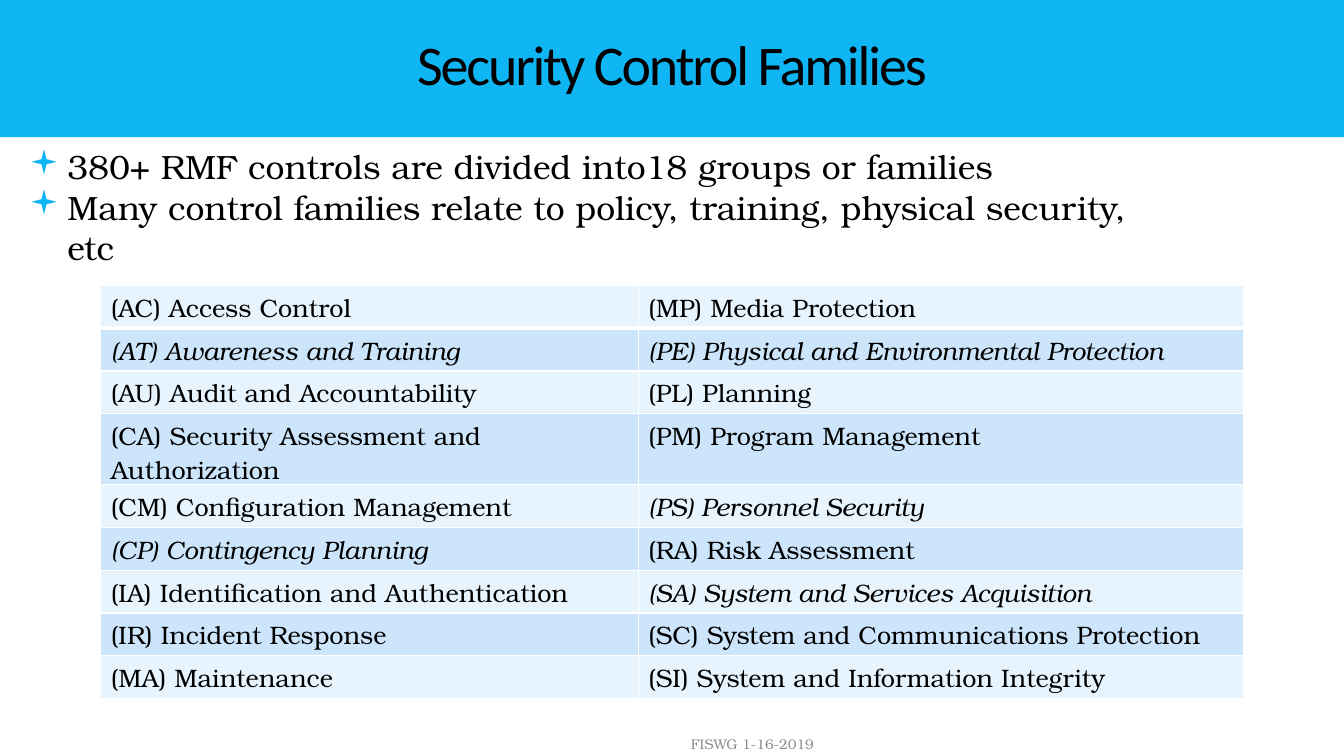
from lxml import etree
from pptx import Presentation
from pptx.dml.color import RGBColor
from pptx.enum.text import MSO_ANCHOR, MSO_AUTO_SIZE, PP_ALIGN
from pptx.oxml.ns import qn
from pptx.util import Inches, Pt

CENTER, RIGHT = PP_ALIGN.CENTER, PP_ALIGN.RIGHT
MIDDLE, BOTTOM = MSO_ANCHOR.MIDDLE, MSO_ANCHOR.BOTTOM
FIXED, GROW = MSO_AUTO_SIZE.NONE, MSO_AUTO_SIZE.SHAPE_TO_FIT_TEXT

SERIF = "TeX Gyre Bonum"
BLUE, BLACK, GRAY, WHITE = "10B6F4", "000000", "8C8C8C", "FFFFFF"
BANDS = ["E7F3FD", "CCE5FB"]
WIDTH, HEIGHT = 13.33, 7.5
INDENT = 0.38
COLUMNS, TABLE_HEIGHT = [5.33, 6], 3.83

BULLETS = [
    "380+ RMF controls are divided into18 groups or families",
    "Many control families relate to policy, training, physical security, etc",
]
FAMILIES = [
    ("(AC) Access Control", "(MP) Media Protection"),
    ("(AT) Awareness and Training", "(PE) Physical and Environmental Protection"),
    ("(AU) Audit and Accountability", "(PL) Planning"),
    ("(CA) Security Assessment and Authorization", "(PM) Program Management"),
    ("(CM) Configuration Management", "(PS) Personnel Security"),
    ("(CP) Contingency Planning", "(RA) Risk Assessment"),
    ("(IA) Identification and Authentication", "(SA) System and Services Acquisition"),
    ("(IR) Incident Response", "(SC) System and Communications Protection"),
    ("(MA) Maintenance", "(SI) System and Information Integrity"),
]
ITALIC_CODES = {"AT", "PE", "PS", "CP", "SA"}


def color(value):
    return RGBColor.from_string(value)


def write(paragraph, text, size, font=SERIF, fill=BLACK, italic=False):
    run = paragraph.add_run()
    run.text = text
    formats = {"size": Pt(size), "name": font, "bold": False, "italic": italic}
    for name, value in formats.items():
        setattr(run.font, name, value)
    run.font.color.rgb = color(fill)
    return run


presentation = Presentation()
presentation.slide_width, presentation.slide_height = Inches(WIDTH), Inches(HEIGHT)
slide = presentation.slides.add_slide(presentation.slide_layouts[5])

# Title banner
title = slide.shapes.title
title.left, title.top, title.width, title.height = 0, 0, Inches(WIDTH), Inches(1.36)
title.fill.solid()
title.fill.fore_color.rgb = color(BLUE)
frame = title.text_frame
formats = {"vertical_anchor": MIDDLE, "auto_size": FIXED, "word_wrap": True}
for side in ("left", "top", "right", "bottom"):
    formats["margin_" + side] = Inches(0.25)
for name, value in formats.items():
    setattr(frame, name, value)
paragraph = frame.paragraphs[0]
paragraph.alignment, paragraph.line_spacing = CENTER, 0.85
run = write(paragraph, "Security Control Families", 40, "Calibri")
run.font._element.set("spc", "-150")

# Bulleted introduction
frame = slide.shapes.add_textbox(
    Inches(0.19), Inches(1.4), Inches(11.24), Inches(0.91)).text_frame
frame.word_wrap, frame.auto_size = True, GROW
for index, text in enumerate(BULLETS):
    paragraph = frame.add_paragraph() if index else frame.paragraphs[0]
    write(paragraph, text, 24)
    properties = paragraph._p.get_or_add_pPr()
    properties.set("marL", str(Inches(INDENT)))
    properties.set("indent", str(Inches(-INDENT)))
    bullet_color = etree.SubElement(properties, qn("a:buClr"))
    etree.SubElement(bullet_color, qn("a:srgbClr"), val=BLUE)
    etree.SubElement(properties, qn("a:buFont"), typeface="Wingdings")
    etree.SubElement(properties, qn("a:buChar"), char="▪")

# Footer
frame = slide.shapes.add_textbox(
    Inches(6.57), Inches(7.15), Inches(1.6), Inches(0.35)).text_frame
formats = {"word_wrap": True, "auto_size": FIXED, "vertical_anchor": BOTTOM,
           "margin_bottom": Inches(0.04)}
for name, value in formats.items():
    setattr(frame, name, value)
frame.paragraphs[0].alignment = RIGHT
write(frame.paragraphs[0], "FISWG 1-16-2019", 10, fill=GRAY)

# Table of control families
table = slide.shapes.add_table(
    len(FAMILIES), len(COLUMNS), Inches(1), Inches(2.83),
    Inches(sum(COLUMNS)), Inches(TABLE_HEIGHT)).table
table.first_row = table.horz_banding = False
for column, width in zip(table.columns, COLUMNS):
    column.width = Inches(width)
for row_index, families in enumerate(FAMILIES):
    table.rows[row_index].height = Inches(TABLE_HEIGHT / len(FAMILIES))
    for column_index, family in enumerate(families):
        cell = table.cell(row_index, column_index)
        write(cell.text_frame.paragraphs[0], family, 18,
              italic=family[1:3] in ITALIC_CODES)

        # White rules, thicker under the first row
        for side in "LRTB":
            thick = (row_index, side) in [(0, "B"), (1, "T")]
            border = etree.SubElement(cell._tc.get_or_add_tcPr(), qn("a:ln" + side),
                                      w=str(Pt(3 if thick else 1)))
            border_fill = etree.SubElement(border, qn("a:solidFill"))
            etree.SubElement(border_fill, qn("a:srgbClr"), val=WHITE)
        cell.fill.solid()
        cell.fill.fore_color.rgb = color(BANDS[row_index % 2])

presentation.save("out.pptx")
